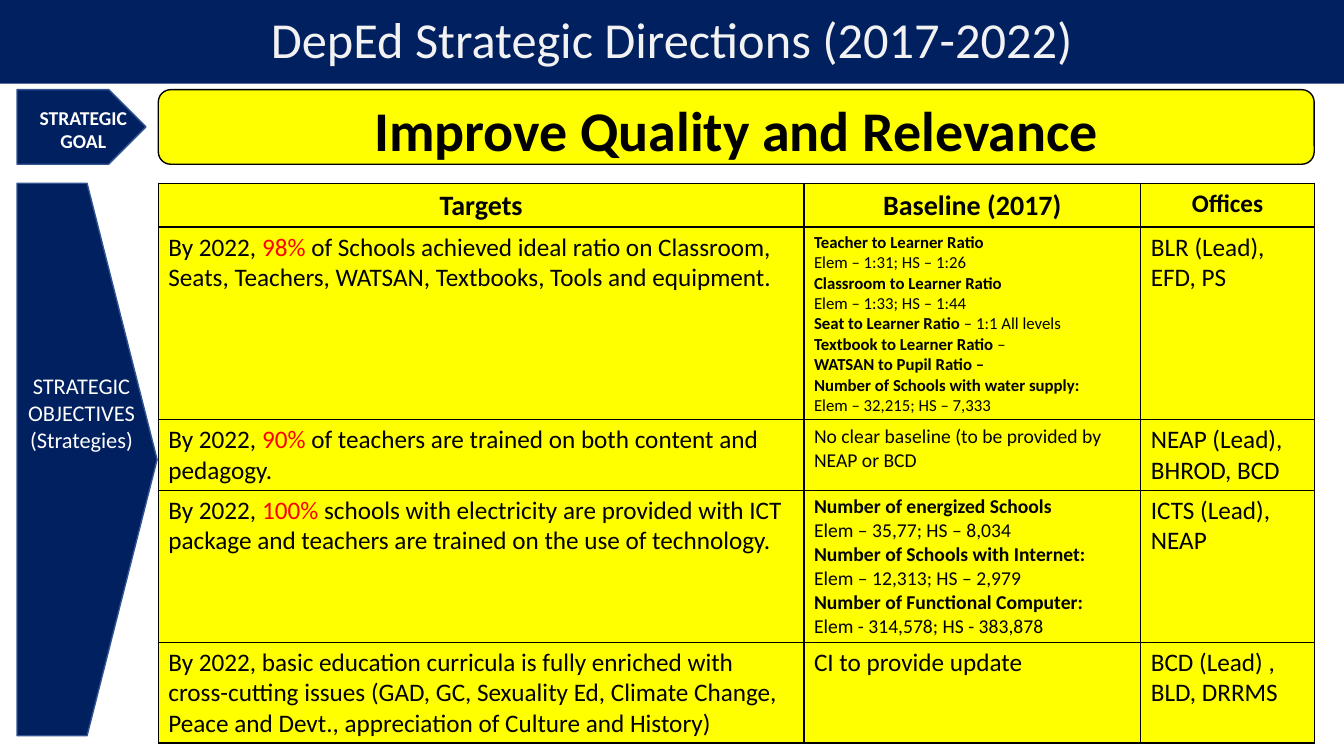
from dataclasses import dataclass

from lxml import etree
from pptx import Presentation
from pptx import util as u
from pptx.dml.color import RGBColor
from pptx.enum import shapes, text
from pptx.oxml import ns

# Content: a paragraph is a list of (words, look) spans
TITLE = "DepEd Strategic Directions (2017-2022)"
GOAL = "Improve Quality and Relevance"
GOAL_LABEL = ["STRATEGIC", "GOAL"]
OBJECTIVES_LABEL = ["STRATEGIC", "OBJECTIVES", "(Strategies)"]
HEADINGS = [("Targets", 20), ("Baseline (2017)", 20), ("Offices", 18)]
PLAIN, BOLD, RED = "plain", "bold", "red"

# Each row: target, baseline, baseline type size, offices
ROWS = [
    (
        [[("By 2022, ", PLAIN), ("98% ", RED),
          ("of Schools achieved ideal ratio on Classroom, Seats, Teachers, "
           "WATSAN, Textbooks, Tools and equipment.", PLAIN)]],
        [
            [("Teacher to Learner Ratio", BOLD)],
            [("Elem – 1:31; HS – 1:26", PLAIN)],
            [("Classroom to Learner Ratio", BOLD)],
            [("Elem – 1:33; HS – 1:44", PLAIN)],
            [("Seat to Learner Ratio ", BOLD), ("– 1:1 All levels", PLAIN)],
            [("Textbook to Learner Ratio ", BOLD), ("–", PLAIN)],
            [("WATSAN to Pupil Ratio –", BOLD)],
            [("Number of Schools with water supply:", BOLD)],
            [("Elem – 32,215; HS – 7,333", PLAIN)],
        ],
        12,
        [[("BLR (Lead), EFD, PS", PLAIN)]],
    ),
    (
        [[("By 2022, ", PLAIN), ("90% ", RED),
          ("of teachers are trained on both content and pedagogy.", PLAIN)]],
        [[("No clear baseline (to be provided by NEAP or BCD", PLAIN)]],
        14,
        [[("NEAP (Lead), BHROD, BCD", PLAIN)]],
    ),
    (
        [[("By 2022, ", PLAIN), ("100%", RED),
          (" schools with electricity are provided with ICT package and "
           "teachers are trained on the use of technology.", PLAIN)]],
        [
            [("Number of energized Schools", BOLD)],
            [("Elem – 35,77; HS – 8,034", PLAIN)],
            [("Number of Schools with Internet:", BOLD)],
            [("Elem – 12,313; HS – 2,979", PLAIN)],
            [("Number of Functional Computer:", BOLD)],
            [("Elem - 314,578; HS - 383,878", PLAIN)],
        ],
        14,
        [[("ICTS (Lead), NEAP", PLAIN)]],
    ),
    (
        [[("By 2022, basic education curricula is fully enriched with "
           "cross-cutting issues (GAD, GC, Sexuality Ed, Climate Change, "
           "Peace and Devt., appreciation of Culture and History)", PLAIN)]],
        [[("CI to provide update", PLAIN)]],
        18,
        [[("BCD (Lead) , BLD, DRRMS", PLAIN)]],
    ),
]


@dataclass(frozen=True)
class Theme:
    font: str = "Calibri"
    navy: str = "002060"
    edge: str = "325491"
    yellow: str = "FFFF00"
    black: str = "000000"
    white: str = "FFFFFF"
    pale: str = "F2F2F2"
    red: str = "FF0000"
    title: int = 36
    goal: int = 40
    goal_label: int = 14
    objectives_label: int = 16
    body: int = 18


theme = Theme()

# Layout in centimetres
SLIDE_W, SLIDE_H = 33.87, 19.05
TITLE_H = 2.11
LEFT, MAIN = 0.43, 3.99
GOAL_TOP, GOAL_H = 2.26, 1.88
TABLE_TOP = 4.62
COLUMNS = [16.27, 8.49, 4.37]
HEIGHTS = [1.1, 4.85, 1.75, 3.83, 2.54]


def place(left, top, width, height):
    return u.Cm(left), u.Cm(top), u.Cm(width), u.Cm(height)


def paint(item, color):
    item.fill.solid()
    item.fill.fore_color.rgb = RGBColor.from_string(color)


def style(para, size, color, bold=False, align=text.PP_ALIGN.CENTER):
    para.alignment = align
    for span in para.runs:
        font = span.font
        font.name, font.size, font.bold = theme.font, u.Pt(size), bold
        font.color.rgb = RGBColor.from_string(color)


def add_block(page, kind, area, fill, edge):
    block = page.shapes.add_shape(kind, *place(*area))
    block.shadow.inherit = False
    paint(block, fill)
    block.line.color.rgb = RGBColor.from_string(edge)
    block.line.width = u.Pt(1)
    return block


def add_label(page, lines, area, size, bold):
    box = page.shapes.add_textbox(*place(*area))
    box.text_frame.word_wrap = False
    box.text_frame.text = "\n".join(lines)
    for para in box.text_frame.paragraphs:
        style(para, size, theme.white, bold)


def add_borders(cell):
    props = cell._tc.get_or_add_tcPr()
    for index, side in enumerate(("lnL", "lnR", "lnT", "lnB")):
        line = etree.Element(ns.qn("a:" + side), w=str(u.Pt(1)))
        fill = etree.SubElement(line, ns.qn("a:solidFill"))
        etree.SubElement(fill, ns.qn("a:srgbClr"), val=theme.black)
        props.insert(index, line)


def fill_cell(cell, paragraphs, size):
    frame = cell.text_frame
    for index, spans in enumerate(paragraphs):
        para = frame.add_paragraph() if index else frame.paragraphs[0]
        for words, look in spans:
            span = para.add_run()
            span.text = words
        style(para, size, theme.black, align=text.PP_ALIGN.LEFT)
        for span, (words, look) in zip(para.runs, spans):
            span.font.bold = look == BOLD
            if look == RED:
                span.font.color.rgb = RGBColor.from_string(theme.red)


def add_targets(page):
    area = place(MAIN, TABLE_TOP, sum(COLUMNS), sum(HEIGHTS))
    table = page.shapes.add_table(len(HEIGHTS), len(COLUMNS), *area).table
    table.first_row = table.horz_banding = False
    for column, width in zip(table.columns, COLUMNS):
        column.width = u.Cm(width)
    for row, height in zip(table.rows, HEIGHTS):
        row.height = u.Cm(height)
    for cell in table.iter_cells():
        paint(cell, theme.yellow)
        add_borders(cell)
    for column, (heading, size) in enumerate(HEADINGS):
        cell = table.cell(0, column)
        cell.text_frame.text = heading
        style(cell.text_frame.paragraphs[0], size, theme.black, True)
    for row, (target, baseline, size, offices) in enumerate(ROWS, 1):
        fill_cell(table.cell(row, 0), target, theme.body)
        fill_cell(table.cell(row, 1), baseline, size)
        fill_cell(table.cell(row, 2), offices, theme.body)


def main():
    deck = Presentation()
    deck.slide_width, deck.slide_height = u.Cm(SLIDE_W), u.Cm(SLIDE_H)
    page = deck.slides.add_slide(deck.slide_layouts[5])

    # Title band
    title = page.shapes.title
    title.left, title.top, title.width, title.height = place(0, 0, SLIDE_W, TITLE_H)
    paint(title, theme.navy)
    title.text_frame.text = TITLE
    title.text_frame.vertical_anchor = text.MSO_ANCHOR.MIDDLE
    title.text_frame.paragraphs[0].line_spacing = 0.9
    style(title.text_frame.paragraphs[0], theme.title, theme.pale)

    # Objectives arrow
    arrow = shapes.MSO_SHAPE.PENTAGON
    add_block(page, arrow, (LEFT, TABLE_TOP, 3.53, 13.92), theme.navy, theme.edge)
    add_label(page, OBJECTIVES_LABEL, (LEFT, 9.25, 3.25, 2.31),
              theme.objectives_label, False)

    # Goal banner and its arrow
    goal = add_block(page, shapes.MSO_SHAPE.ROUNDED_RECTANGLE,
                     (MAIN, GOAL_TOP, sum(COLUMNS), GOAL_H), theme.yellow, theme.black)
    goal.text_frame.text = GOAL
    goal.text_frame.vertical_anchor = text.MSO_ANCHOR.MIDDLE
    goal.text_frame.paragraphs[0].line_spacing = 1.07
    style(goal.text_frame.paragraphs[0], theme.goal, theme.black, True)
    add_block(page, arrow, (LEFT, GOAL_TOP, 3.25, GOAL_H), theme.navy, theme.edge)
    add_label(page, GOAL_LABEL, (0.74, 2.54, 2.72, 1.45), theme.goal_label, True)

    # Targets table
    add_targets(page)
    deck.save("out.pptx")


if __name__ == "__main__":
    main()
